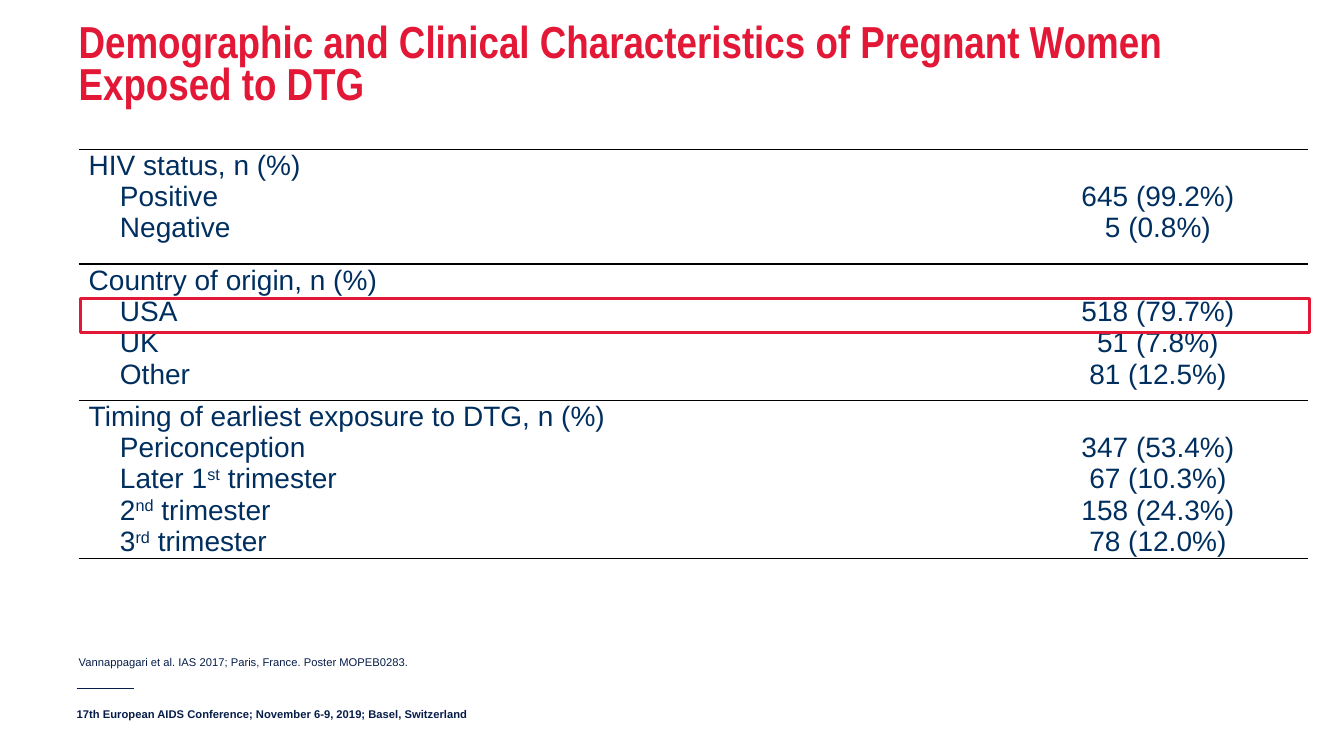
from dataclasses import dataclass

import pptx
import pptx.dml.color
import pptx.enum.shapes
import pptx.enum.text
import pptx.oxml
import pptx.oxml.ns
import pptx.util

EMU_PER_PX = 9144  # 100 px to the inch
NAVY, TABLE_BLUE, RED, BLACK = "071D49", "002F5F", "E31836", "000000"
LINE_HEIGHT = 31
CELL_PADDING = 1
INDENT = 31
COLUMN_WIDTHS = (922, 297)
ANCHOR = pptx.enum.text.MSO_ANCHOR
ALIGN = pptx.enum.text.PP_ALIGN


@dataclass(frozen=True)
class Box:
    left: int
    top: int
    width: int
    height: int


@dataclass(frozen=True)
class TextBlock:
    box: Box
    text: str
    font: dict
    anchor: ANCHOR
    spacing: dict


@dataclass(frozen=True)
class Category:
    heading: str
    height: int
    entries: tuple[tuple[str, str], ...]


TEXT_BLOCKS = (
    TextBlock(
        Box(78, 17, 1100, 92),
        "Demographic and Clinical Characteristics of Pregnant Women Exposed to DTG",
        {"name": "Arial Narrow", "size": pptx.util.Pt(32), "bold": True, "color": RED},
        ANCHOR.BOTTOM,
        {"line_spacing": pptx.util.Pt(30)},
    ),
    TextBlock(
        Box(78, 630, 1219, 33),
        "Vannappagari et al. IAS 2017; Paris, France. Poster MOPEB0283.",
        {"name": "Arial", "size": pptx.util.Pt(8), "color": NAVY},
        ANCHOR.BOTTOM,
        {"space_after": pptx.util.Pt(4)},
    ),
    TextBlock(
        Box(76, 702, 1185, 16),
        "17th European AIDS Conference; November 6-9, 2019; Basel, Switzerland",
        {"name": "Arial", "size": pptx.util.Pt(8), "bold": True, "color": NAVY},
        ANCHOR.TOP,
        {"space_after": pptx.util.Pt(4)},
    ),
)
TABLE_FONT = {"name": "Arial", "size": pptx.util.Pt(20), "color": TABLE_BLUE}

# Text between carets is superscript.
CATEGORIES = (
    Category("HIV status, n (%)", 114, (
        ("Positive", "645 (99.2%)"),
        ("Negative", "5 (0.8%)"),
    )),
    Category("Country of origin, n (%)", 135, (
        ("USA", "518 (79.7%)"),
        ("UK", "51 (7.8%)"),
        ("Other", "81 (12.5%)"),
    )),
    Category("Timing of earliest exposure to DTG, n (%)", 157, (
        ("Periconception", "347 (53.4%)"),
        ("Later 1^st^ trimester", "67 (10.3%)"),
        ("2^nd^ trimester", "158 (24.3%)"),
        ("3^rd^ trimester", "78 (12.0%)"),
    )),
)
TABLE_BOX = Box(78, 148, sum(COLUMN_WIDTHS), sum(category.height for category in CATEGORIES))


def px(length: int) -> pptx.util.Emu:
    return pptx.util.Emu(length * EMU_PER_PX)


def rgb(color: str) -> pptx.dml.color.RGBColor:
    return pptx.dml.color.RGBColor.from_string(color)


def place(box: Box) -> tuple[pptx.util.Emu, ...]:
    return px(box.left), px(box.top), px(box.width), px(box.height)


def apply_format(target, values: dict) -> None:
    for name, value in values.items():
        if name == "color":
            target.color.rgb = rgb(value)
        else:
            setattr(target, name, value)


def add_runs(paragraph, text: str, font: dict) -> None:
    for position, part in enumerate(text.split("^")):
        if part:
            run = paragraph.add_run()
            run.text = part
            apply_format(run.font, font)
            if position % 2:
                run._r.get_or_add_rPr().set("baseline", "30000")


def add_text_block(slide, block: TextBlock) -> None:
    frame = slide.shapes.add_textbox(*place(block.box)).text_frame
    apply_format(frame, {
        "word_wrap": True, "vertical_anchor": block.anchor,
        "margin_left": 0, "margin_right": 0, "margin_top": 0, "margin_bottom": 0,
    })
    paragraph = frame.paragraphs[0]
    apply_format(paragraph, block.spacing)
    add_runs(paragraph, block.text, block.font)


def style_cell(cell, top_margin: int) -> None:
    """Rule the cell above and below only, and leave it unfilled."""
    apply_format(cell, {
        "margin_left": px(10), "margin_right": px(10),
        "margin_top": px(top_margin), "margin_bottom": px(CELL_PADDING),
    })
    properties = cell._tc.get_or_add_tcPr()
    namespace = pptx.oxml.ns.nsdecls("a")
    ruled = f'<a:solidFill><a:srgbClr val="{BLACK}"/></a:solidFill>'
    for side, paint in (("L", "<a:noFill/>"), ("R", "<a:noFill/>"), ("T", ruled), ("B", ruled)):
        properties.append(pptx.oxml.parse_xml(
            f'<a:ln{side} {namespace} w="{pptx.util.Pt(1)}">{paint}</a:ln{side}>'))
    cell.fill.background()


def fill_cell(cell, lines: list[str], alignment: ALIGN) -> None:
    frame = cell.text_frame
    for index, line in enumerate(lines):
        paragraph = frame.add_paragraph() if index else frame.paragraphs[0]
        paragraph.alignment = alignment
        if index and alignment == ALIGN.LEFT:
            paragraph._p.get_or_add_pPr().set("marL", str(px(INDENT)))
        add_runs(paragraph, line, TABLE_FONT)


def add_characteristics_table(slide) -> None:
    table = slide.shapes.add_table(
        len(CATEGORIES), len(COLUMN_WIDTHS), *place(TABLE_BOX)).table
    apply_format(table, {"first_row": False, "horz_banding": False})
    for column, width in zip(table.columns, COLUMN_WIDTHS):
        column.width = px(width)
    for row, category in zip(table.rows, CATEGORIES):
        row.height = px(category.height)
        label_cell, value_cell = row.cells
        style_cell(label_cell, CELL_PADDING)
        style_cell(value_cell, CELL_PADDING + LINE_HEIGHT)
        labels, values = zip(*category.entries)
        fill_cell(label_cell, [category.heading, *labels], ALIGN.LEFT)
        fill_cell(value_cell, list(values), ALIGN.CENTER)


def add_footer_rule(slide) -> None:
    rule = slide.shapes.add_connector(
        pptx.enum.shapes.MSO_CONNECTOR.STRAIGHT, px(76), px(683), px(133), px(683))
    apply_format(rule.line, {"color": NAVY, "width": pptx.util.Pt(0.25)})
    rule._element.spPr.append(
        pptx.oxml.parse_xml(f'<a:effectLst {pptx.oxml.ns.nsdecls("a")}/>'))


def add_highlight(slide, box: Box) -> None:
    frame = slide.shapes.add_shape(pptx.enum.shapes.MSO_SHAPE.RECTANGLE, *place(box))
    frame.shadow.inherit = False
    frame.fill.background()
    apply_format(frame.line, {"color": RED, "width": pptx.util.Pt(2)})


def main() -> None:
    presentation = pptx.Presentation()
    apply_format(presentation, {"slide_width": px(1333), "slide_height": px(750)})
    slide = presentation.slides.add_slide(presentation.slide_layouts[6])
    add_footer_rule(slide)
    add_characteristics_table(slide)
    for block in TEXT_BLOCKS:
        add_text_block(slide, block)
    add_highlight(slide, Box(80, 296, 1219, 34))
    presentation.save("out.pptx")


if __name__ == "__main__":
    main()
